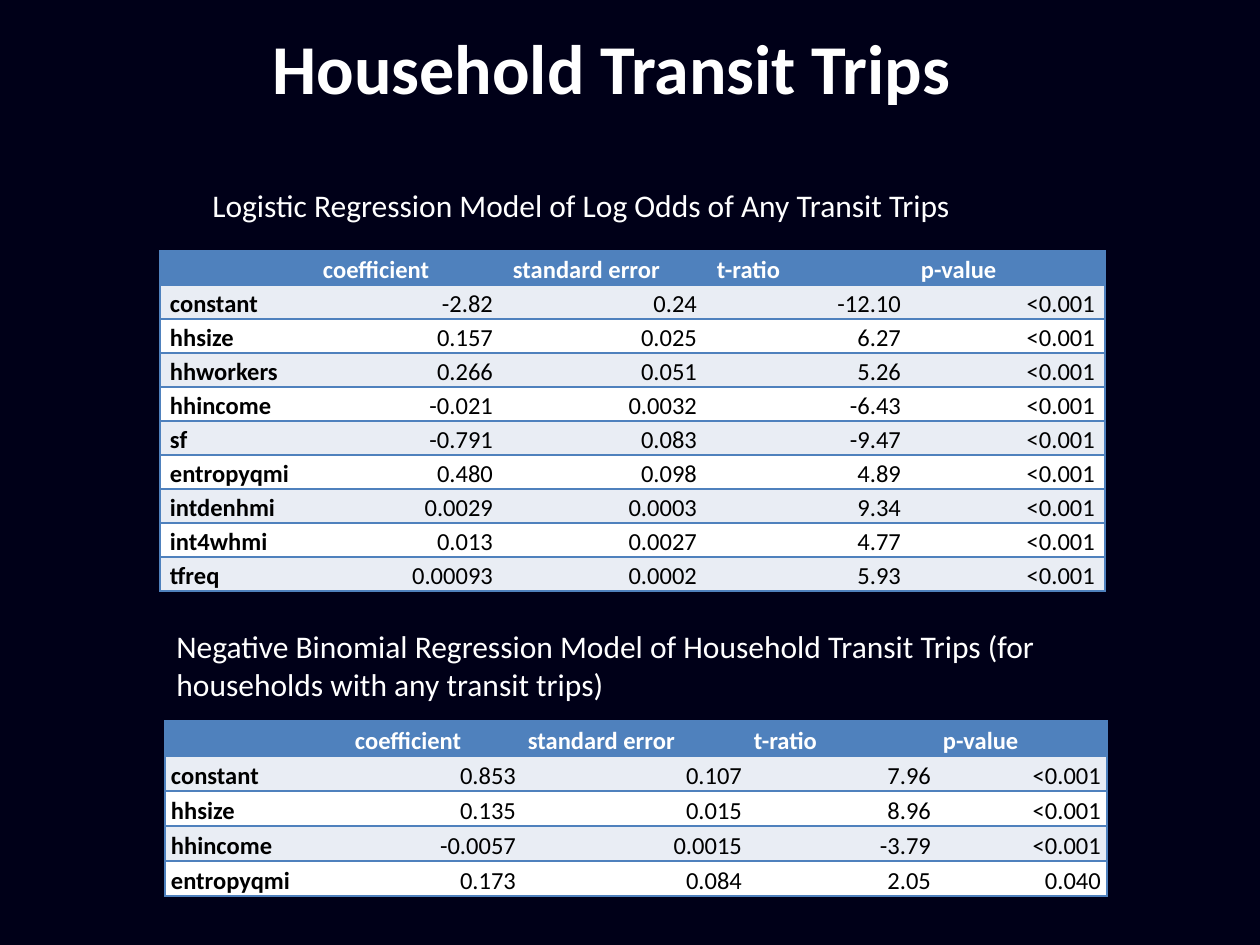
import lxml.etree
import pptx
import pptx.dml.color
import pptx.enum.text
import pptx.oxml.ns
import pptx.util

EMU_PER_PX = 914400 / 126
FONT = "Calibri"
PLAIN_STYLE = "{2D5ABB26-0587-4C30-8999-92F81FD0307C}"
COLORS = {
    "background": "000018",
    "light": "FFFFFF",
    "dark": "000000",
    "accent": "4F81BD",
    "band": "E9EDF4",
}
HEADER = ["", "coefficient", "standard error", "t-ratio", "p-value"]
LOGISTIC_ROWS = [
    ["constant", "-2.82", "0.24", "-12.10", "<0.001"],
    ["hhsize", "0.157", "0.025", "6.27", "<0.001"],
    ["hhworkers", "0.266", "0.051", "5.26", "<0.001"],
    ["hhincome", "-0.021", "0.0032", "-6.43", "<0.001"],
    ["sf", "-0.791", "0.083", "-9.47", "<0.001"],
    ["entropyqmi", "0.480", "0.098", "4.89", "<0.001"],
    ["intdenhmi", "0.0029", "0.0003", "9.34", "<0.001"],
    ["int4whmi", "0.013", "0.0027", "4.77", "<0.001"],
    ["tfreq", "0.00093", "0.0002", "5.93", "<0.001"],
]
BINOMIAL_ROWS = [
    ["constant", "0.853", "0.107", "7.96", "<0.001"],
    ["hhsize", "0.135", "0.015", "8.96", "<0.001"],
    ["hhincome", "-0.0057", "0.0015", "-3.79", "<0.001"],
    ["entropyqmi", "0.173", "0.084", "2.05", "0.040"],
]


def px(length):
    return pptx.util.Emu(round(length * EMU_PER_PX))


def rgb(name):
    return pptx.dml.color.RGBColor.from_string(COLORS[name])


def format_runs(para, size, color, bold=False):
    for span in para.runs:
        span.font.name = FONT
        span.font.size = pptx.util.Pt(size)
        span.font.bold = bold
        span.font.color.rgb = rgb(color)


def add_title(page, text, left, top, width, height):
    title = page.shapes.title
    title.left, title.top, title.width, title.height = map(px, (left, top, width, height))
    frame = title.text_frame
    frame.text = text
    frame.word_wrap = False
    frame.auto_size = pptx.enum.text.MSO_AUTO_SIZE.NONE
    frame.vertical_anchor = pptx.enum.text.MSO_ANCHOR.TOP
    para = frame.paragraphs[0]
    para.alignment = pptx.enum.text.PP_ALIGN.LEFT
    format_runs(para, 40, "light", bold=True)


def add_caption(page, text, left, top, width, height):
    box = page.shapes.add_textbox(*map(px, (left, top, width, height)))
    box.text_frame.word_wrap = True
    box.text_frame.text = text
    format_runs(box.text_frame.paragraphs[0], 18, "light")


def add_borders(cell, sides):
    """Draw 1 pt lines; sides come in the schema order L, R, T, B."""
    properties = cell._tc.get_or_add_tcPr()
    qn = pptx.oxml.ns.qn
    for side in sides:
        line = lxml.etree.SubElement(properties, qn(f"a:ln{side}"), w="12700")
        fill = lxml.etree.SubElement(line, qn("a:solidFill"))
        lxml.etree.SubElement(fill, qn("a:srgbClr"), val=COLORS["accent"])


def format_cell(cell, text, row, column, column_count, side_inset, top_inset):
    left_side = "L" if column == 0 else ""
    right_side = "R" if column == column_count - 1 else ""
    add_borders(cell, left_side + right_side + "TB")
    cell.fill.solid()
    cell.fill.fore_color.rgb = rgb("accent" if row == 0 else "band" if row % 2 else "light")
    cell.margin_left = cell.margin_right = px(side_inset)
    cell.margin_top, cell.margin_bottom = px(top_inset), 0
    cell.vertical_anchor = pptx.enum.text.MSO_ANCHOR.BOTTOM
    para = cell.text_frame.paragraphs[0]
    para.text = text
    para.line_spacing = 1.15
    if row and column:
        para.alignment = pptx.enum.text.PP_ALIGN.RIGHT
    format_runs(para, 14, "dark" if row else "light", bold=row == 0 or column == 0)
    if not text:
        # An empty cell would otherwise stretch its row to the default size.
        lxml.etree.SubElement(para._p, pptx.oxml.ns.qn("a:endParaRPr"), sz="1400")


def add_model_table(page, rows, left, top, widths, row_height, side_inset, top_inset):
    lines = [HEADER] + rows
    frame = page.shapes.add_table(
        len(lines), len(widths), px(left), px(top), px(sum(widths)), px(row_height * len(lines))
    )
    table = frame.table
    table._tbl.tblPr.find(pptx.oxml.ns.qn("a:tableStyleId")).text = PLAIN_STYLE
    table.horz_banding = False
    for column, width in zip(table.columns, widths):
        column.width = px(width)
    for row, values in enumerate(lines):
        table.rows[row].height = px(row_height)
        for column, text in enumerate(values):
            format_cell(
                table.cell(row, column), text, row, column, len(widths), side_inset, top_inset
            )


def main():
    deck = pptx.Presentation()
    deck.slide_width, deck.slide_height = px(1260), px(945)
    page = deck.slides.add_slide(deck.slide_layouts[5])
    page.background.fill.solid()
    page.background.fill.fore_color.rgb = rgb("background")

    add_title(page, "Household Transit Trips", 260, 18, 711, 97)
    add_caption(
        page, "Logistic Regression Model of Log Odds of Any Transit Trips", 200, 180, 845, 50
    )
    add_model_table(page, LOGISTIC_ROWS, 160, 251, [153, 190, 204, 204, 194], 34, 10, 0)
    add_caption(
        page,
        "Negative Binomial Regression Model of Household Transit Trips "
        "(for households with any transit trips)",
        164, 621, 941, 89,
    )
    add_model_table(page, BINOMIAL_ROWS, 165, 721, [184, 173, 226, 189, 170], 35, 6, 1)
    deck.save("out.pptx")


if __name__ == "__main__":
    main()
